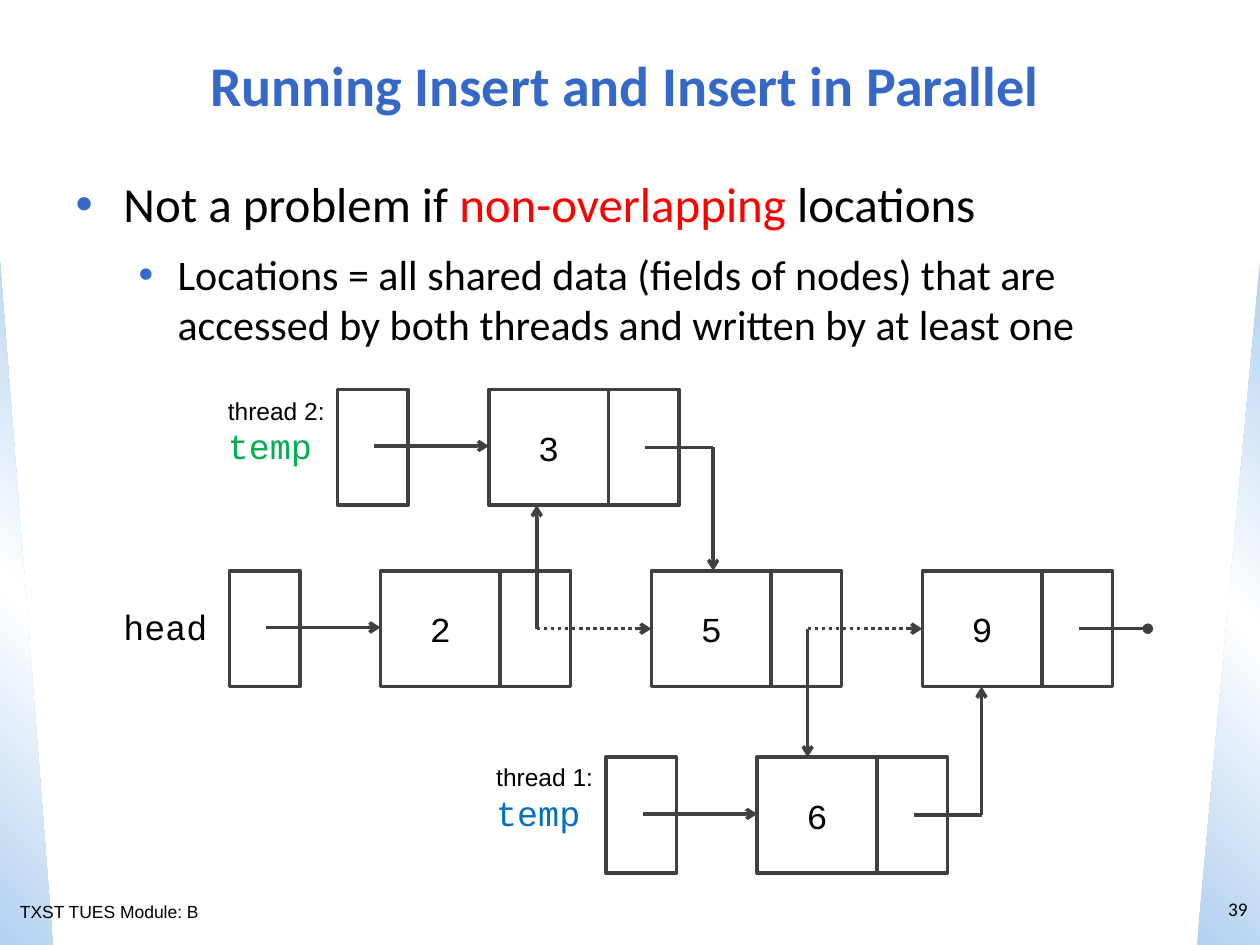
import pptx
import pptx.util
import pptx.dml.color
import pptx.enum.shapes
import pptx.enum.text
import pptx.oxml
import pptx.oxml.ns

RGB = pptx.dml.color.RGBColor
INCH, PT = pptx.util.Inches, pptx.util.Pt
KIND = pptx.enum.shapes.MSO_SHAPE
ALIGN = pptx.enum.text.PP_ALIGN
ANCHOR = pptx.enum.text.MSO_ANCHOR
AUTO = pptx.enum.text.MSO_AUTO_SIZE

BLACK = RGB(0, 0, 0)
GRAY = RGB(0x40, 0x40, 0x40)
BLUE = RGB(0x35, 0x68, 0xC7)
RED = RGB(0xFF, 0, 0)
GREEN = RGB(0, 0xB0, 0x50)
AZURE = RGB(0, 0x70, 0xC0)
SKY, WHITE = RGB(0xB3, 0xD1, 0xF0), RGB(0xFF, 0xFF, 0xFF)

# Text formats
HEAD = {"name": "Calibri", "size": PT(32), "bold": True}
MAIN = {"name": "Calibri", "size": PT(28)}
SUB = {"name": "Calibri", "size": PT(24)}
CODE = {"name": "Courier New", "size": PT(20)}
NOTE = {"name": "Arial", "size": PT(14)}
FOOT = {"name": "Arial", "size": PT(10)}
PAGE = {"name": "Calibri", "size": PT(11)}

# Content: a paragraph is a list of (text, format, colour) runs
TITLE = [[("Running Insert and Insert in Parallel", HEAD, BLUE)]]
BODY = [
    [("Not a problem if ", MAIN, BLACK), ("non-overlapping ", MAIN, RED),
     ("locations", MAIN, BLACK)],
    [("Locations = all shared data (fields of nodes) that are accessed "
      "by both threads and written by at least one", SUB, BLACK)],
]
INDENT = [(0.38, -0.38), (0.81, -0.31)]
LABELS = [
    ((0.88, 4.76, 0.88, 0.44), [[("head", CODE, BLACK)]]),
    ((1.71, 3.09, 0.97, 0.67),
     [[("thread 2:", NOTE, BLACK)], [("temp", CODE, GREEN)]]),
    ((3.84, 6, 0.97, 0.67),
     [[("thread 1:", NOTE, BLACK)], [("temp", CODE, AZURE)]]),
    ((0.06, 7.1, 1.75, 0.27), [[("TXST TUES Module: B", FOOT, BLACK)]]),
]

# List grid: each node is a value cell and a link cell
VALUE, LINK, TALL = 0.95, 0.56, 0.92
STEP = 2.15           # from node to node
LEAD = 1.2            # from a pointer box to its node
OUT = 1.24            # from a node's left edge to its link's start
TOP, MID, LOW = 3.09, 4.53, 6.01
FIRST = 3.02
COL = [FIRST + i * STEP for i in range(3)]
NEW2, NEW1 = 3.88, 6.01
NODES = [("2", COL[0], MID), ("5", COL[1], MID), ("9", COL[2], MID),
         ("3", NEW2, TOP), ("6", NEW1, LOW)]
STARTS = [(COL[0], MID), (NEW2, TOP), (NEW1, LOW)]

deck = pptx.Presentation()
deck.slide_width, deck.slide_height = INCH(10), INCH(7.5)
slide = deck.slides.add_slide(deck.slide_layouts[1])
shapes = slide.shapes


def place(shape, box):
    names = ("left", "top", "width", "height")
    for name, val in zip(names, box):
        setattr(shape, name, INCH(val))


def write(frame, paras, align=ALIGN.LEFT):
    for i, runs in enumerate(paras):
        para = frame.paragraphs[0] if i == 0 else frame.add_paragraph()
        para.alignment = align
        for text, form, color in runs:
            run = para.add_run()
            run.text = text
            for name, val in form.items():
                setattr(run.font, name, val)
            run.font.color.rgb = color


def label(box, paras, wrap=False, align=ALIGN.LEFT):
    frame = shapes.add_textbox(*map(INCH, box)).text_frame
    frame.word_wrap = wrap
    write(frame, paras, align)
    return frame


def make(tag, **attrs):
    node = pptx.oxml.parse_xml(
        f"<a:{tag} {pptx.oxml.ns.nsdecls('a')}/>")
    for name, val in attrs.items():
        node.set(name, str(val))
    return node


def cell(x, y, width, text=""):
    box = shapes.add_shape(KIND.RECTANGLE, *map(INCH, (x, y, width, TALL)))
    box.shadow.inherit = False
    box.fill.background()
    box.line.color.rgb, box.line.width = GRAY, PT(2)
    if text:
        box.text_frame.vertical_anchor = ANCHOR.MIDDLE
        write(box.text_frame, [[(text, CODE, BLACK)]], ALIGN.CENTER)


def link(start, end, tip="arrow", dots=False):
    line = shapes.add_connector(pptx.enum.shapes.MSO_CONNECTOR.STRAIGHT,
                                *map(INCH, start + end))
    line.line.color.rgb, line.line.width = GRAY, PT(2)
    ln = line.line._get_or_add_ln()
    if dots:
        ln.append(make("prstDash", val="sysDot"))
    if tip:
        ln.append(make("tailEnd", type=tip))
    line._element.spPr.append(make("effectLst"))


def slab(x, width, angle, flip):
    wedge = shapes.add_shape(KIND.RIGHT_TRIANGLE,
                             *map(INCH, (x, 2.08, width, 5.42)))
    wedge.shadow.inherit = False
    wedge.line.fill.background()
    grad, stops = make("gradFill", rotWithShape=1), make("gsLst")
    for pos, color in ((0, SKY), (50, WHITE), (100, SKY)):
        stop = make("gs", pos=pos * 1000)
        stop.append(make("srgbClr", val=color))
        stops.append(stop)
    grad.append(stops)
    grad.append(make("lin", ang=angle * 60000, scaled=0))
    props = wedge._element.spPr
    props.find(pptx.oxml.ns.qn("a:prstGeom")).addnext(grad)
    if flip:
        props.xfrm.set("flipH", "1")


# Side wedges
slab(0, 0.42, 315, False)
slab(9.5, 0.5, 45, True)

# Title and bullets
title, body = slide.placeholders
place(title, (0.25, 0.25, 9.42, 0.83))
place(body, (0.5, 1.33, 9.17, 5.58))
for holder in (title, body):
    holder.text_frame.auto_size = AUTO.NONE
title.text_frame.vertical_anchor = ANCHOR.MIDDLE
write(title.text_frame, TITLE, ALIGN.CENTER)
write(body.text_frame, BODY)
for i, para in enumerate(body.text_frame.paragraphs):
    para.level = i
    para.space_before = PT(9 * i)
    props = para._p.get_or_add_pPr()
    for name, val in zip(("marL", "indent"), INDENT[i]):
        props.set(name, str(INCH(val)))
    tint = make("buClr")
    tint.append(make("srgbClr", val=BLUE))
    for node in (tint, make("buFont", typeface="Arial"),
                 make("buChar", char="•")):
        props.append(node)

# Nodes and pointer boxes
for text, x, y in NODES:
    cell(x + VALUE, y, LINK)
    cell(x, y, VALUE, text)
for x, y in STARTS:
    cell(x - LEAD, y, LINK)
    link((x - LEAD + 0.29, y + 0.45), (x, y + 0.45))

# Old links, dotted, and the end of the list
row = MID + TALL / 2
for here, after in zip(COL, COL[1:]):
    link((here + OUT, row), (after, row), dots=True)
link((COL[2] + OUT, row), (9.11, row), "oval")

# New links: down or up from the list, then back to it
link((COL[0] + OUT, row), (COL[0] + OUT, TOP + TALL))
link((COL[1] + OUT, row), (COL[1] + OUT, LOW))
for x, y, turn, end in ((NEW2, TOP, 5.66, MID),
                        (NEW1, LOW, 7.79, MID + TALL)):
    level = y + TALL / 2
    link((x + OUT, level), (turn, level), tip=None)
    link((turn, level), (turn, end))

# Labels, footer and page number
for box, paras in LABELS:
    label(box, paras)
page = label((9.5, 6.92, 0.5, 0.58), [[("39", PAGE, BLACK)]], True, ALIGN.RIGHT)
page.vertical_anchor = ANCHOR.MIDDLE

deck.save("out.pptx")
